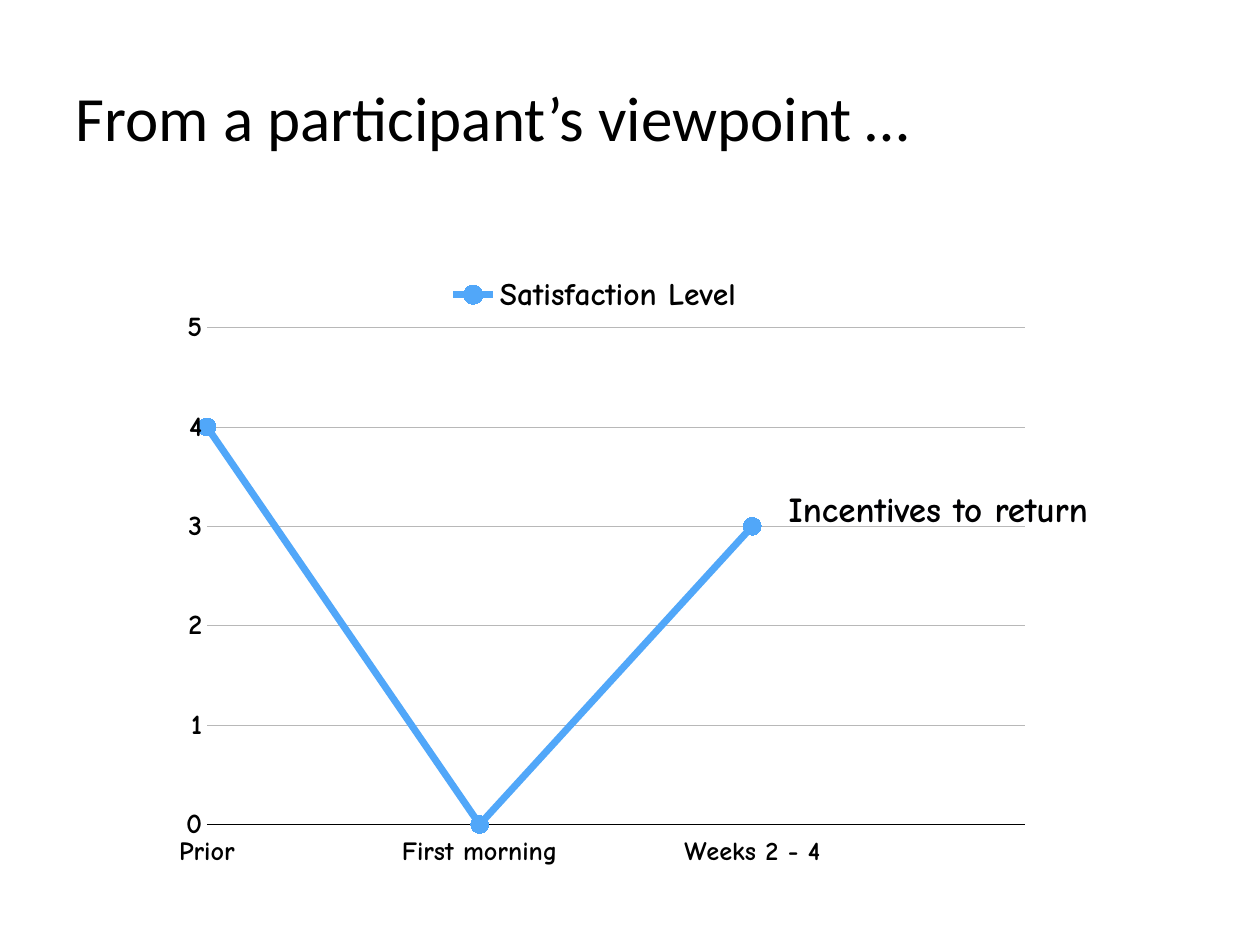
from lxml import etree
from pptx import Presentation
from pptx.chart.data import CategoryChartData
from pptx.dml.color import RGBColor
from pptx.enum import chart as ch, text as tx
from pptx.oxml.ns import qn
from pptx.util import Inches, Pt

# Content
TITLE = "From a participant’s viewpoint …"
NOTE = "Incentives to return"
SERIES = "Satisfaction Level"
POINTS = [("Prior", 4), ("First morning", 0), ("Weeks 2 - 4", 3), ("", None)]
PLOT = {"x": 0.054, "y": 0.107, "w": 0.941, "h": 0.797}

BLACK = RGBColor(0, 0, 0)
INK = RGBColor(0, 0, 2)
BLUE = RGBColor(0x51, 0xA7, 0xF9)
GREY = RGBColor(0xB8, 0xB8, 0xB8)
WHITE = RGBColor(255, 255, 255)
HAND = "Comic Neue"


def put(obj, **vals):
    for key, val in vals.items():
        setattr(obj, key, val)


def style(font, size, name=HAND, bold=True, color=BLACK):
    put(font, size=Pt(size), name=name, bold=bold)
    font.color.rgb = color


def stroke(line, color, width):
    line.color.rgb = color
    line.width = Pt(width)


def place(shape, *box):
    for key, val in zip(("left", "top", "width", "height"), box):
        setattr(shape, key, Inches(val))


def fix_plot(chart):
    """Set the inner plot area by hand and start the line on the value axis."""
    area = chart.plots[0]._element.getparent()
    for old in area.findall(qn("c:layout")):
        area.remove(old)
    lay = etree.Element(qn("c:layout"))
    area.insert(0, lay)
    man = etree.SubElement(lay, qn("c:manualLayout"))
    vals = {"layoutTarget": "inner", "xMode": "edge", "yMode": "edge", **PLOT}
    for tag, val in vals.items():
        etree.SubElement(man, qn("c:" + tag)).set("val", str(val))
    axis = area.find(qn("c:valAx"))
    for old in axis.findall(qn("c:crossBetween")):
        axis.remove(old)
    cross = etree.Element(qn("c:crossBetween"))
    cross.set("val", "midCat")
    axis.find(qn("c:crosses")).addnext(cross)


prs = Presentation()
put(prs, slide_width=Inches(10), slide_height=Inches(7.5))
slide = prs.slides.add_slide(prs.slide_layouts[5])

# Title
title = slide.shapes.title
place(title, 0.5, 0.3, 6.96, 1.25)
title.text_frame.text = TITLE
title.text_frame.vertical_anchor = tx.MSO_ANCHOR.MIDDLE
para = title.text_frame.paragraphs[0]
para.alignment = tx.PP_ALIGN.LEFT
style(para.runs[0].font, 36, "Calibri", False)

# Line chart
data = CategoryChartData()
data.categories = [name for name, _ in POINTS]
data.add_series(SERIES, [val for _, val in POINTS])
box = [Inches(n) for n in (1.27, 2.07, 6.9, 4.95)]
chart = slide.shapes.add_chart(ch.XL_CHART_TYPE.LINE_MARKERS, *box, data).chart
style(chart.font, 10, "Calibri", False)
put(chart, has_title=False, has_legend=True)
put(chart.legend, position=ch.XL_LEGEND_POSITION.TOP, include_in_layout=True)
style(chart.legend.font, 18)
chart.plots[0].vary_by_categories = False

# Axes
cats, vals = chart.category_axis, chart.value_axis
for axis, size in ((cats, 15), (vals, 16)):
    put(axis, major_tick_mark=ch.XL_TICK_MARK.NONE,
        minor_tick_mark=ch.XL_TICK_MARK.NONE)
    style(axis.tick_labels.font, size)
cats.tick_labels.number_format_is_linked = False
cats.tick_label_position = ch.XL_TICK_LABEL_POSITION.LOW
stroke(cats.format.line, BLACK, 1)
put(vals, minimum_scale=0, maximum_scale=5, major_unit=1,
    has_major_gridlines=True)
vals.format.line.fill.background()
stroke(vals.major_gridlines.format.line, GREY, 0.25)

# Series
line = chart.plots[0].series[0]
line.smooth = False
stroke(line.format.line, BLUE, 4)
put(line.marker, style=ch.XL_MARKER_STYLE.CIRCLE, size=10)
line.marker.format.fill.solid()
line.marker.format.fill.fore_color.rgb = BLUE
stroke(line.marker.format.line, BLUE, 1)
fix_plot(chart)

# Note beside the last point
note = slide.shapes.add_textbox(*[Inches(n) for n in (6.21, 3.82, 2.9, 0.49)])
frame = note.text_frame
edge = Inches(0.05)
put(frame, text=NOTE, word_wrap=True, margin_left=edge, margin_right=edge,
    margin_top=edge, margin_bottom=edge,
    auto_size=tx.MSO_AUTO_SIZE.SHAPE_TO_FIT_TEXT)
style(frame.paragraphs[0].runs[0].font, 20, color=INK)

prs.save("out.pptx")
